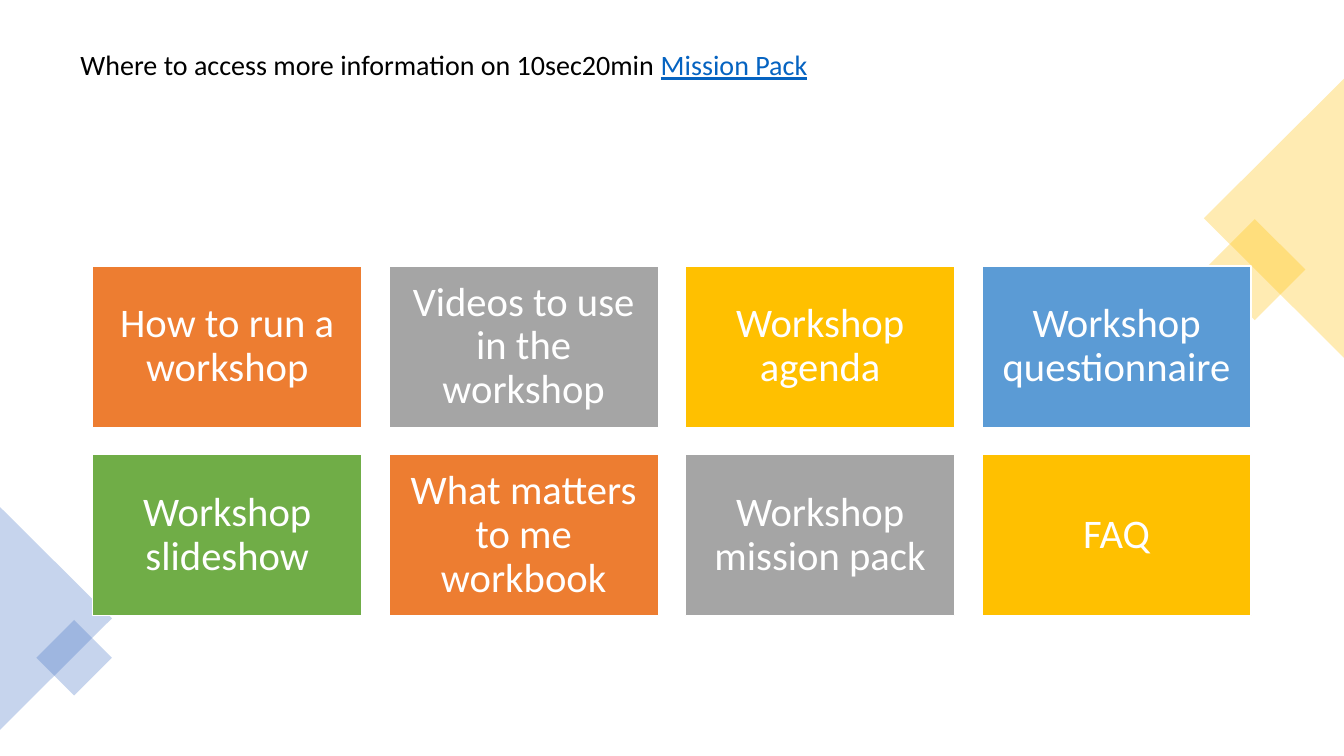
from dataclasses import dataclass
from lxml.etree import SubElement
from pptx import Presentation
from pptx.dml.color import RGBColor as Color
from pptx.enum.shapes import MSO_SHAPE as Preset
from pptx.enum.text import MSO_ANCHOR as Anchor, PP_ALIGN as Align
from pptx.oxml.ns import qn
from pptx.util import Inches, Pt


@dataclass(frozen=True)
class Theme:
    font: str = "Calibri"
    title_size: int = 20
    card_size: int = 29
    black: str = "000000"
    white: str = "FFFFFF"
    link: str = "0563C1"
    orange: str = "ED7D31"
    grey: str = "A5A5A5"
    gold: str = "FFC000"
    sky: str = "5B9BD5"
    green: str = "70AD47"
    blue: str = "4472C4"


theme = Theme()


def add_run(paragraph, text, size, color):
    run = paragraph.add_run()
    run.text = text
    run.font.name = theme.font
    run.font.size = Pt(size)
    run.font.color.rgb = Color.from_string(color)
    return run


def add_filled(preset, left, top, width, height, color):
    shape = slide.shapes.add_shape(
        preset, Inches(left), Inches(top), Inches(width), Inches(height))
    shape.shadow.inherit = False
    shape.fill.solid()
    shape.fill.fore_color.rgb = Color.from_string(color)
    return shape


presentation = Presentation()
presentation.slide_width = Inches(13.33)
presentation.slide_height = Inches(7.5)
slide = presentation.slides.add_slide(presentation.slide_layouts[6])

title = slide.shapes.add_textbox(
    Inches(0.7), Inches(0.35), Inches(11.93), Inches(1.24))
title_frame = title.text_frame
title_frame.word_wrap = True
title_frame.vertical_anchor = Anchor.TOP
title_frame.margin_top = Inches(0.16)
title_line = title_frame.paragraphs[0]
title_line.line_spacing = 0.9
add_run(title_line, "Where to access more information on 10sec20min ",
        theme.title_size, theme.black)
link = add_run(title_line, "Mission Pack", theme.title_size, theme.link)
link.font.underline = True

decorations = [
    (Preset.RECTANGLE, 12.09, 2.32, 0.71, 0.71, 45, theme.gold),
    (Preset.ISOSCELES_TRIANGLE, 11.25, 1.47, 2.77, 1.39, 270, theme.gold),
    (Preset.ISOSCELES_TRIANGLE, -0.55, 5.58, 2.21, 1.11, 90, theme.blue),
    (Preset.RECTANGLE, 0.47, 6.26, 0.53, 0.53, 45, theme.blue),
]
for preset, left, top, width, height, angle, color in decorations:
    decoration = add_filled(preset, left, top, width, height, color)
    decoration.rotation = angle
    decoration.line.fill.background()
    fill_color = decoration.element.spPr.find(qn("a:solidFill"))[0]
    SubElement(fill_color, qn("a:alpha"), val="30000")

cards = [
    ("How to run a workshop", theme.orange),
    ("Videos to use in the workshop", theme.grey),
    ("Workshop agenda", theme.gold),
    ("Workshop questionnaire", theme.sky),
    ("Workshop slideshow", theme.green),
    ("What matters to me workbook", theme.orange),
    ("Workshop mission pack", theme.grey),
    ("FAQ", theme.gold),
]
columns = 4
grid_left, grid_top = 0.92, 2.64
card_width, card_height, gap = 2.67, 1.6, 0.27

for index, (label, color) in enumerate(cards):
    row, column = divmod(index, columns)
    card = add_filled(
        Preset.RECTANGLE,
        grid_left + column * (card_width + gap),
        grid_top + row * (card_height + gap),
        card_width, card_height, color)
    card.line.color.rgb = Color.from_string(theme.white)
    card.line.width = Pt(1)
    frame = card.text_frame
    frame.word_wrap = True
    frame.vertical_anchor = Anchor.MIDDLE
    frame.margin_left = frame.margin_right = Inches(0.12)
    frame.margin_top = frame.margin_bottom = Inches(0.12)
    paragraph = frame.paragraphs[0]
    paragraph.alignment = Align.CENTER
    paragraph.line_spacing = 0.9
    add_run(paragraph, label, theme.card_size, theme.white)

presentation.save("out.pptx")
